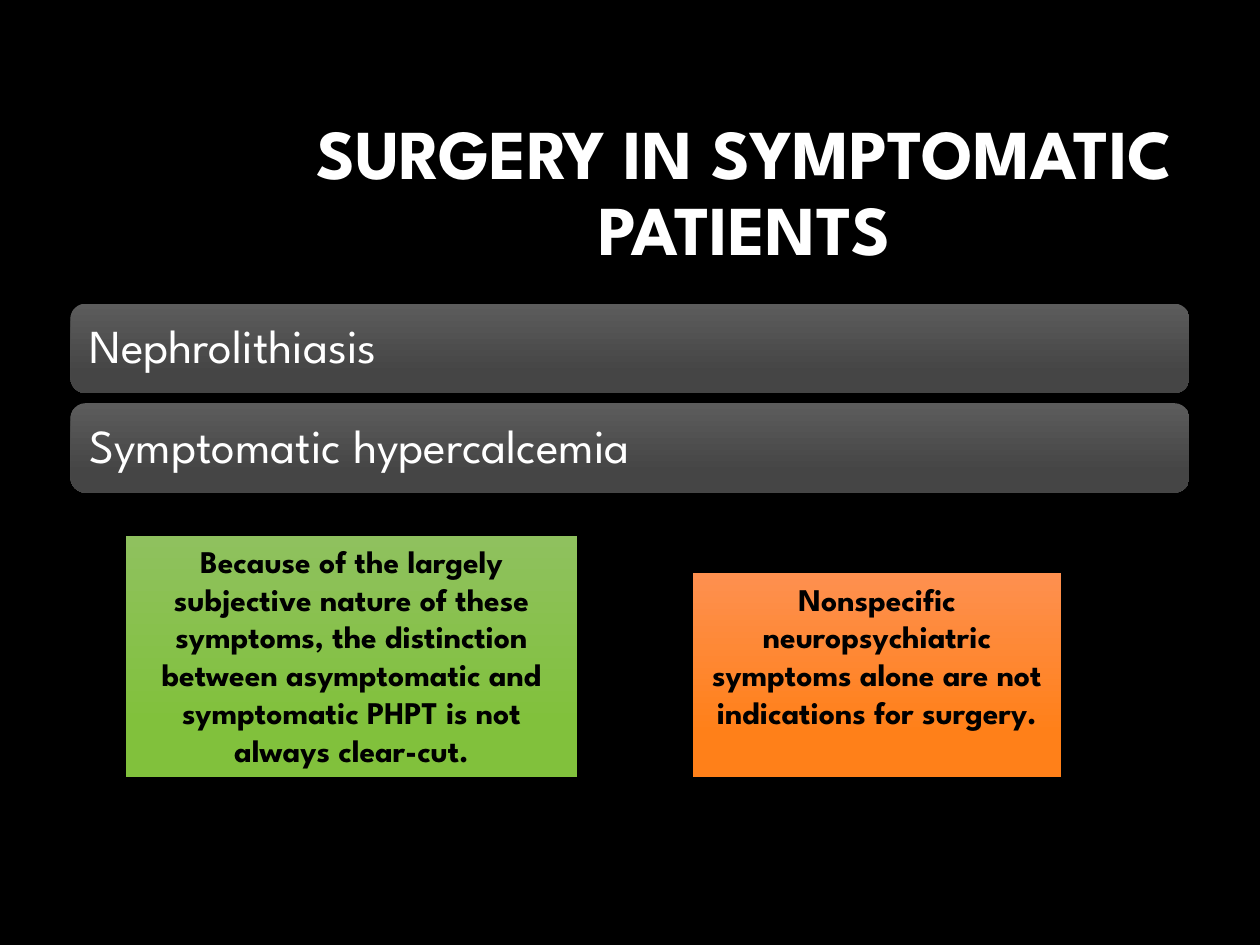
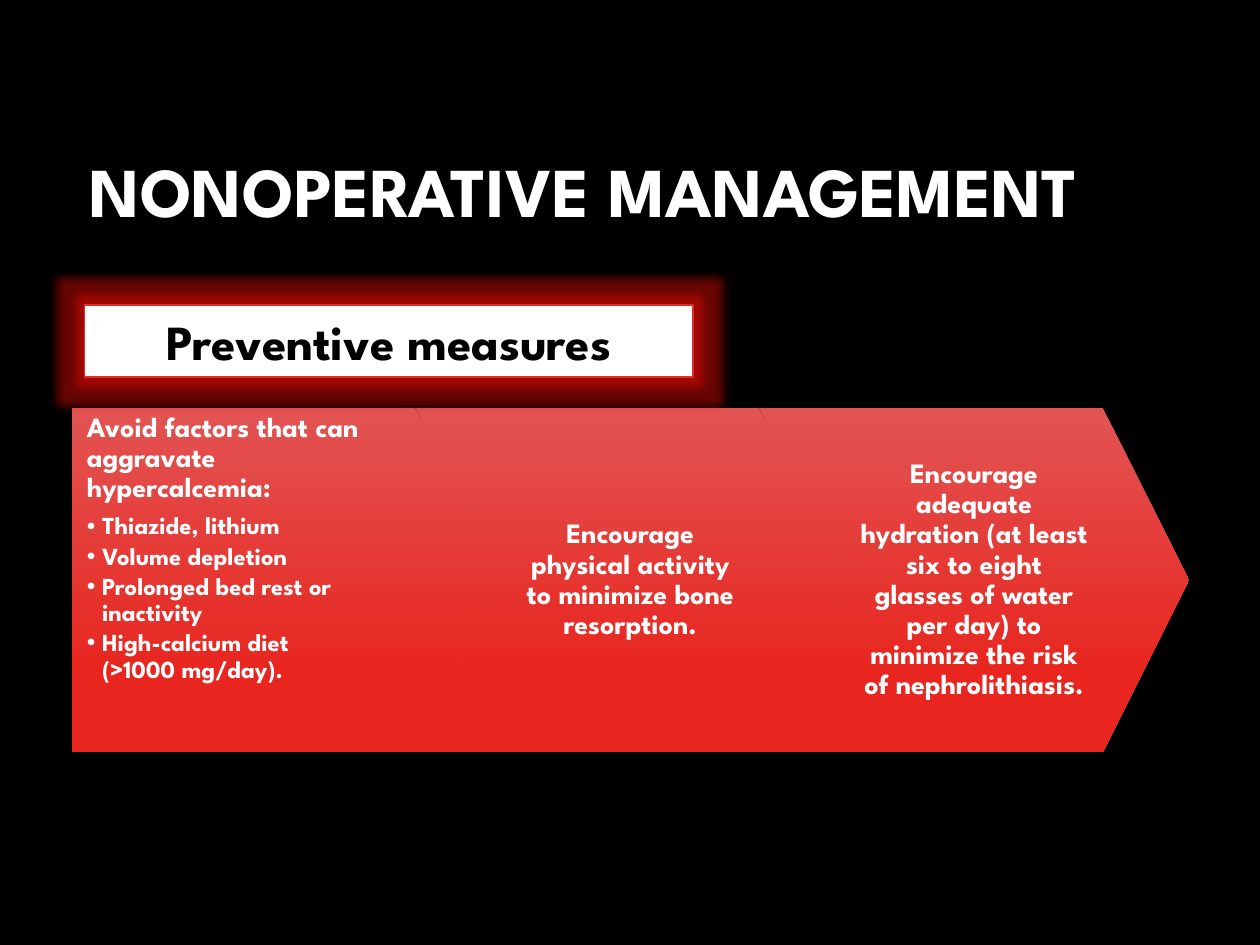
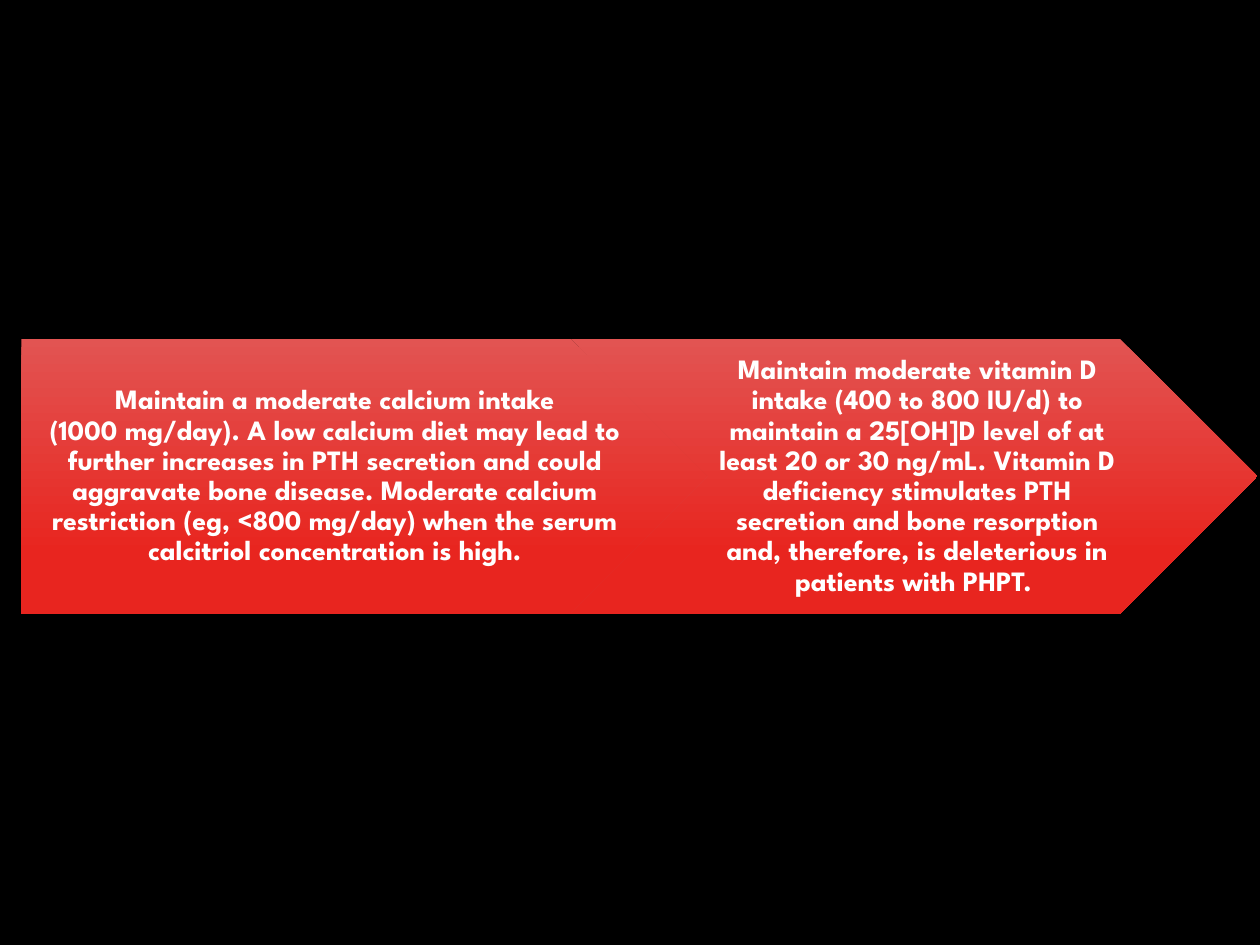
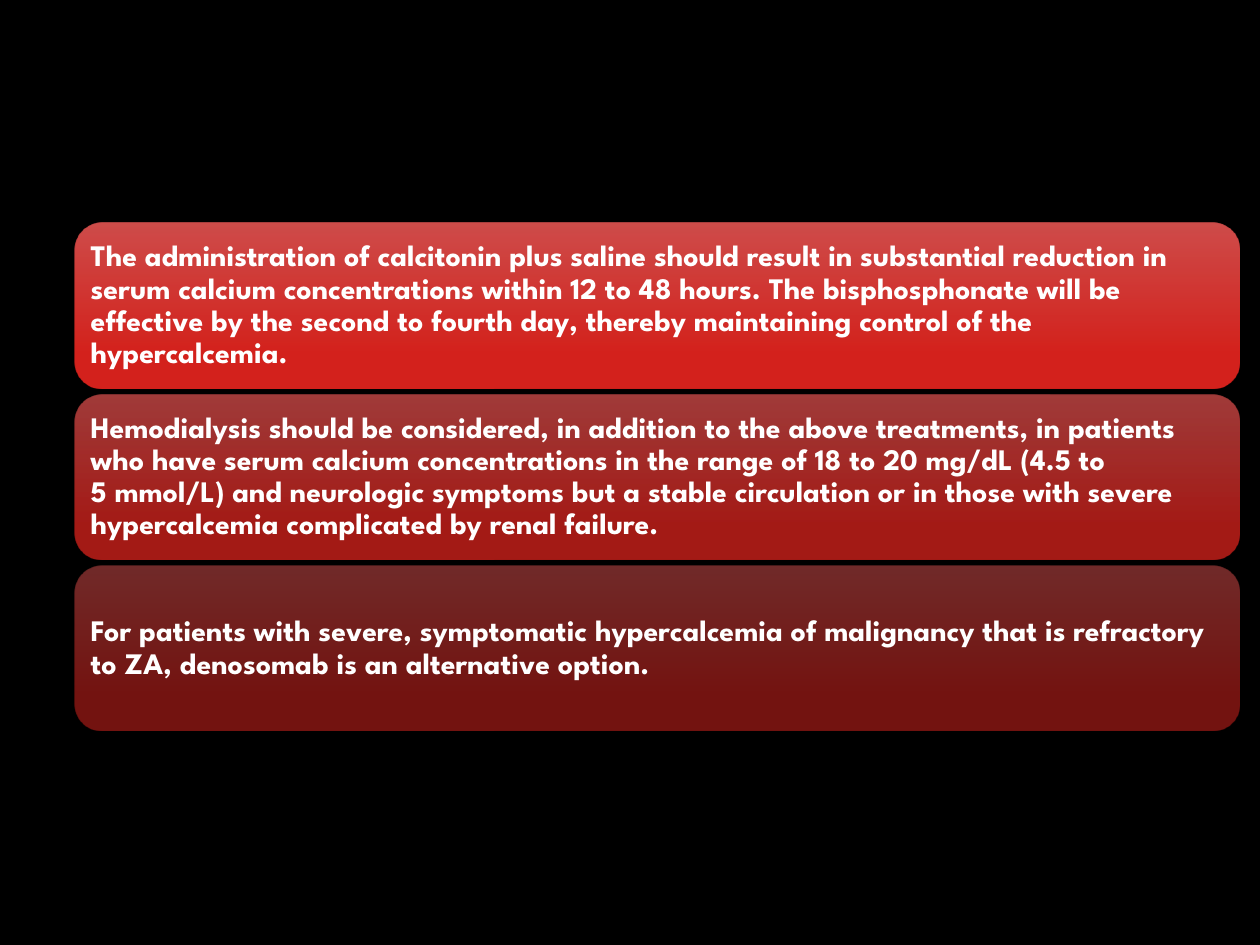
import pptx
import pptx.util
import pptx.dml.color
import pptx.enum.shapes
import pptx.enum.text
import pptx.oxml.ns
from lxml import etree

Inches = pptx.util.Inches
Pt = pptx.util.Pt
RGBColor = pptx.dml.color.RGBColor
MSO_SHAPE = pptx.enum.shapes.MSO_SHAPE
ANCHOR = pptx.enum.text.MSO_ANCHOR
ALIGN = pptx.enum.text.PP_ALIGN
qn = pptx.oxml.ns.qn

FONT = "League Spartan"
NBSP = chr(160)  # written as ~ in the texts below
BLACK = RGBColor(0x00, 0x00, 0x00)
WHITE = RGBColor(0xFF, 0xFF, 0xFF)
RED_LINE = RGBColor(0xDF, 0x2E, 0x28)
RED_GLOW = RGBColor(0xFF, 0x0D, 0x05)
# Gradient pairs, top to bottom
GRAY = (RGBColor(0x5C, 0x5C, 0x5C), RGBColor(0x45, 0x45, 0x45))
RED = (RGBColor(0xE2, 0x54, 0x52), RGBColor(0xE8, 0x25, 0x1F))
GREEN = (RGBColor(0x8F, 0xC1, 0x5E), RGBColor(0x81, 0xC1, 0x3C))
ORANGE = (RGBColor(0xFE, 0x90, 0x4F), RGBColor(0xFF, 0x80, 0x19))


def add_slide(prs):
    slide = prs.slides.add_slide(prs.slide_layouts[6])
    slide.background.fill.solid()
    slide.background.fill.fore_color.rgb = BLACK
    return slide


def add_panel(slide, kind, box, colors, alpha=100, adj=None):
    """Borderless shape with a vertical gradient."""
    sp = slide.shapes.add_shape(kind, *map(Inches, box))
    sp.shadow.inherit = False
    sp.line.fill.background()
    if adj is not None:
        sp.adjustments[0] = adj
    sp.fill.gradient()
    sp.fill.gradient_angle = 270
    for stop, color, position in zip(sp.fill.gradient_stops, colors, (0, 0.78)):
        stop.color.rgb = color
        stop.position = position
    if alpha < 100:
        for clr in sp.fill._xPr.iter(qn("a:srgbClr")):
            etree.SubElement(clr, qn("a:alpha")).set("val", str(alpha * 1000))
    return sp


def setup_frame(sp, insets, anchor):
    tf = sp.text_frame
    tf.word_wrap = True
    tf.vertical_anchor = anchor
    tf.margin_left, tf.margin_top, tf.margin_right, tf.margin_bottom = map(Inches, insets)
    return tf


def write(p, text, size, color=WHITE, bold=True, align=ALIGN.LEFT, spacing=0.9, after=0.0):
    p.alignment = align
    p.line_spacing = spacing
    p.space_after = Pt(round(size * after, 1))
    r = p.add_run()
    r.text = text.replace("~", NBSP)
    r.font.name = FONT
    r.font.size = Pt(size)
    r.font.bold = bold
    r.font.color.rgb = color


def add_text(slide, box, text, size, insets=(0.1, 0.05, 0.1, 0.05), anchor=ANCHOR.MIDDLE, **style):
    sp = slide.shapes.add_textbox(*map(Inches, box))
    tf = setup_frame(sp, insets, anchor)
    write(tf.paragraphs[0], text, size, **style)
    return tf


def add_title(slide, box, text):
    add_text(slide, box, text, 40, align=ALIGN.CENTER)


def add_bars(slide, box, pitch, texts, size, inset, pad, colors, alphas, bold):
    """Stack of rounded bars; box is the first bar."""
    x, y, w, h = box
    for i, (text, alpha) in enumerate(zip(texts, alphas)):
        top = y + i * pitch
        add_panel(slide, MSO_SHAPE.ROUNDED_RECTANGLE, (x, top, w, h), colors, alpha)
        add_text(slide, (x + pad, top + pad, w - 2 * pad, h - 2 * pad), text, size,
                 insets=(inset,) * 4, bold=bold)


def add_note(slide, box, text, colors):
    sp = add_panel(slide, MSO_SHAPE.RECTANGLE, box, colors)
    tf = setup_frame(sp, (0.1, 0.05, 0.1, 0.05), ANCHOR.TOP)
    write(tf.paragraphs[0], text, 18, BLACK, align=ALIGN.CENTER, spacing=1.0)


def add_bullets(tf, items):
    for item in items:
        p = tf.add_paragraph()
        pPr = p._p.get_or_add_pPr()
        pPr.set("marL", str(Inches(0.12)))
        pPr.set("indent", str(-Inches(0.12)))
        etree.SubElement(pPr, qn("a:buFont")).set("typeface", "Arial")
        etree.SubElement(pPr, qn("a:buChar")).set("char", "•")
        write(p, item, 14, after=0.15)


def add_arrow_chain(slide, box, adj, steps, bullets=()):
    """Pentagon followed by chevrons that overlap by a fifth; box is the first arrow.

    Each step is (text, insets). Bullets, if any, go under the first text.
    """
    x, y, w, h = box
    point = adj * h
    for i, (text, insets) in enumerate(steps):
        left = x + i * 0.8 * w
        if i == 0:
            kind, text_box = MSO_SHAPE.PENTAGON, (left, y, w - point / 2, h)
        else:
            kind, text_box = MSO_SHAPE.CHEVRON, (left + point, y, w - 2 * point, h)
        add_panel(slide, kind, (left, y, w, h), RED, adj=adj)
        if i == 0 and bullets:
            tf = add_text(slide, text_box, text, 16, insets, ANCHOR.TOP, after=0.35)
            add_bullets(tf, bullets)
        else:
            add_text(slide, text_box, text, 16, insets, align=ALIGN.CENTER)


def add_glowing_label(slide, box, text):
    sp = slide.shapes.add_shape(MSO_SHAPE.RECTANGLE, *map(Inches, box))
    sp.shadow.inherit = False
    sp.fill.solid()
    sp.fill.fore_color.rgb = WHITE
    sp.line.color.rgb = RED_LINE
    sp.line.width = Pt(1)
    # Red glow
    effects = sp._element.spPr.find(qn("a:effectLst"))
    glow = etree.SubElement(effects, qn("a:glow"), rad=str(Pt(11)))
    clr = etree.SubElement(glow, qn("a:srgbClr"), val=str(RED_GLOW))
    etree.SubElement(clr, qn("a:alpha"), val="40000")
    tf = setup_frame(sp, (0.1, 0.05, 0.1, 0.05), ANCHOR.TOP)
    write(tf.paragraphs[0], text, 28, BLACK, align=ALIGN.CENTER, spacing=1.0)


def build_surgery(prs):
    slide = add_slide(prs)
    add_title(slide, (2.38, 0.84, 7.06, 1.41), "SURGERY IN SYMPTOMATIC PATIENTS")
    add_bars(slide, (0.56, 2.41, 8.88, 0.71), 0.79,
             ["Nephrolithiasis", "Symptomatic hypercalcemia"],
             27, 0.11, 0.04, GRAY, (100, 100), bold=False)
    add_note(slide, (1, 4.25, 3.58, 1.92),
             "Because of the largely subjective nature of these symptoms, the distinction "
             "between asymptomatic and symptomatic PHPT is not always clear-cut.", GREEN)
    add_note(slide, (5.5, 4.55, 2.92, 1.62),
             "Nonspecific neuropsychiatric symptoms alone are not indications for surgery.",
             ORANGE)


def build_prevention(prs):
    slide = add_slide(prs)
    add_title(slide, (-0.42, 0.84, 10.25, 1.41), "NONOPERATIVE MANAGEMENT~")
    insets = (0.12, 0.04, 0.12, 0.04)
    add_arrow_chain(slide, (0.57, 3.24, 3.41, 2.73), 0.25, [
        ("Avoid factors that can aggravate hypercalcemia:", (0.12, 0.04, 0.48, 0.04)),
        ("Encourage physical activity to minimize bone resorption.", insets),
        ("Encourage adequate hydration (at least six to eight glasses of water per day) "
         "to minimize the risk of nephrolithiasis.", insets),
    ], bullets=[
        "Thiazide, lithium",
        "Volume depletion",
        "Prolonged bed rest or inactivity",
        "High-calcium diet (>1000~mg/day).",
    ])
    add_glowing_label(slide, (0.67, 2.42, 4.83, 0.57), "Preventive measures")


def build_intake(prs):
    slide = add_slide(prs)
    add_arrow_chain(slide, (0.17, 2.69, 5.45, 2.18), 0.5, [
        ("Maintain a moderate calcium intake (1000~mg/day).~A low calcium diet may lead to "
         "further increases in PTH secretion and could aggravate bone disease. Moderate "
         "calcium restriction (eg, <800~mg/day) when the serum calcitriol concentration "
         "is high.", (0.09, 0.05, 0.02, 0.05)),
        ("Maintain moderate vitamin D intake (400 to 800 IU/d) to maintain a 25[OH]D level "
         "of at least 20 or 30~ng/mL. Vitamin D deficiency stimulates PTH secretion and "
         "bone resorption and, therefore, is deleterious in patients with PHPT.~",
         (0.07, 0.05, 0.02, 0.05)),
    ])


def build_treatment(prs):
    slide = add_slide(prs)
    add_bars(slide, (0.59, 1.77, 9.25, 1.31), 1.36, [
        "The administration of~calcitonin plus saline should result in substantial reduction "
        "in serum calcium concentrations within 12 to 48 hours. The bisphosphonate will be "
        "effective by the second to fourth day, thereby maintaining control of the "
        "hypercalcemia.",
        "Hemodialysis should be considered, in addition to the above treatments, in patients "
        "who have serum calcium concentrations in the range of 18 to 20~mg/dL~(4.5 to "
        "5~mmol/L)~and neurologic symptoms but a stable circulation or in those with severe "
        "hypercalcemia complicated by renal failure.",
        "For patients with severe, symptomatic hypercalcemia of malignancy that is refractory "
        "to ZA,~denosomab is an alternative option.",
    ], 17, 0.07, 0.06, RED, (90, 70, 50), bold=True)


def main():
    prs = pptx.Presentation()
    prs.slide_width, prs.slide_height = Inches(10), Inches(7.5)
    for build in (build_surgery, build_prevention, build_intake, build_treatment):
        build(prs)
    prs.save("out.pptx")


if __name__ == "__main__":
    main()
